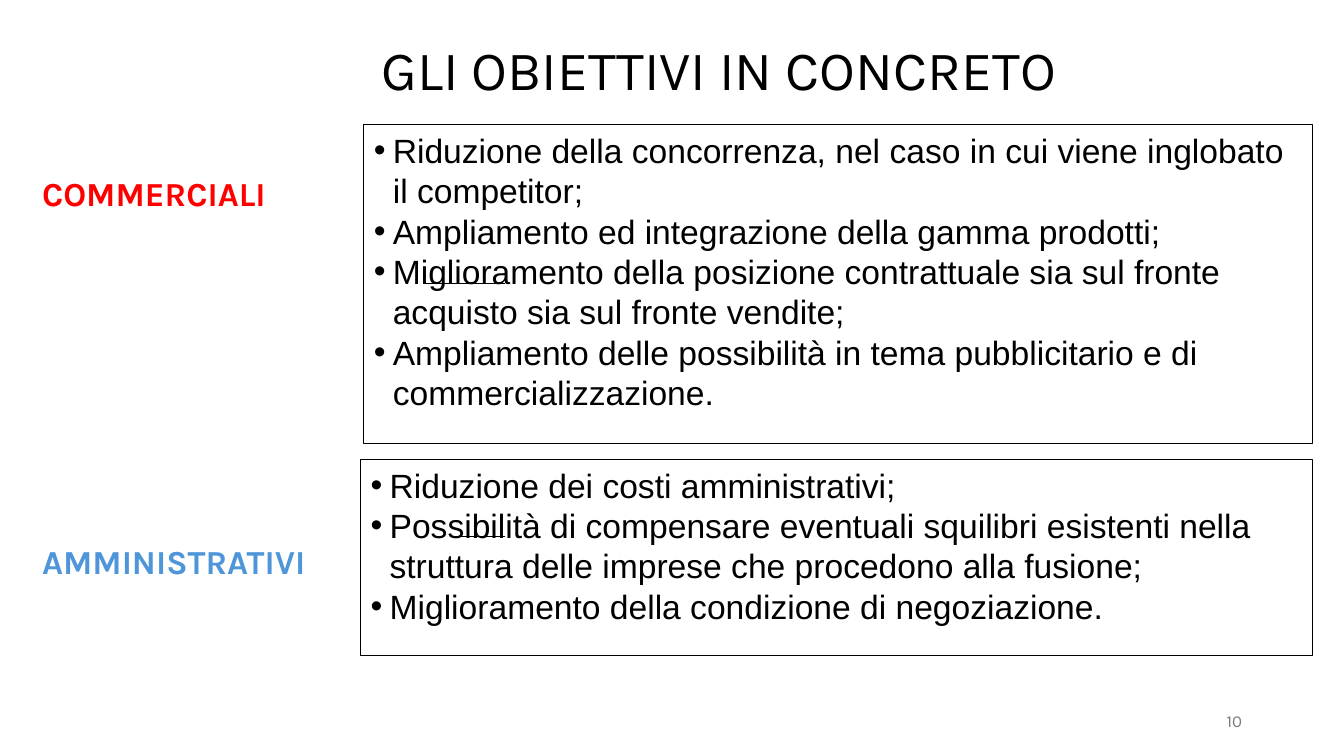
from pptx import Presentation, util as u
from pptx.dml.color import RGBColor
from pptx.enum import shapes, text
from pptx.oxml.ns import qn
from lxml import etree

BLACK = RGBColor(0x00, 0x00, 0x00)
RED = RGBColor(0xFF, 0x00, 0x00)
BLUE = RGBColor(0x4E, 0x95, 0xD9)
GREY = RGBColor(0x79, 0x79, 0x79)
LINE_WIDTH = u.Pt(0.75)
LABEL_LEFT = 0.81
RULE_END = 12.73

COMMERCIAL_GOALS = [
    "Riduzione della concorrenza, nel caso in cui viene inglobato il competitor;",
    "Ampliamento ed integrazione della gamma prodotti;",
    "Miglioramento della posizione contrattuale sia sul fronte acquisto sia sul fronte vendite;",
    "Ampliamento delle possibilità in tema pubblicitario e di commercializzazione.",
]
ADMINISTRATIVE_GOALS = [
    "Riduzione dei costi amministrativi;",
    "Possibilità di compensare eventuali squilibri esistenti nella struttura delle imprese "
    "che procedono alla fusione;",
    "Miglioramento della condizione di negoziazione.",
]


def cm_box(box):
    return [u.Cm(length) for length in box]


def add_bullet(paragraph, indent=0.48):
    properties = paragraph._p.get_or_add_pPr()
    properties.set("marL", str(u.Cm(indent)))
    properties.set("indent", str(-u.Cm(indent)))
    etree.SubElement(properties, qn("a:buFont")).set("typeface", "Arial")
    etree.SubElement(properties, qn("a:buChar")).set("char", "•")


def write_text(shape, lines, size=24, font="Karla", color=BLACK, bold=False,
               align=text.PP_ALIGN.LEFT, anchor=text.MSO_ANCHOR.TOP,
               spacing=1.0, bullets=False):
    frame = shape.text_frame
    frame.word_wrap = True
    frame.vertical_anchor = anchor
    for index, line in enumerate(lines):
        paragraph = frame.add_paragraph() if index else frame.paragraphs[0]
        paragraph.alignment = align
        paragraph.line_spacing = spacing
        if bullets:
            add_bullet(paragraph)
        run = paragraph.add_run()
        run.text = line
        run.font.name = font
        run.font.size = u.Pt(size)
        run.font.bold = bold
        run.font.color.rgb = color


def add_text(slide, box, line, **text_format):
    write_text(slide.shapes.add_textbox(*cm_box(box)), [line], **text_format)


def add_rule(slide, left, right, top):
    rule = slide.shapes.add_connector(
        shapes.MSO_CONNECTOR.STRAIGHT, u.Cm(left), u.Cm(top), u.Cm(right), u.Cm(top))
    rule.line.color.rgb = BLACK
    rule.line.width = LINE_WIDTH
    etree.SubElement(rule._element.spPr, qn("a:effectLst"))


def add_goals(slide, box, label, color, goals, label_drop, label_width, rule_shift, rule_drop):
    left, top, _, _ = box
    # Short rule behind the frame
    add_rule(slide, left + rule_shift, RULE_END, top + rule_drop)
    # Framed bullet list
    frame = slide.shapes.add_shape(shapes.MSO_SHAPE.RECTANGLE, *cm_box(box))
    frame.shadow.inherit = False
    frame.fill.background()
    frame.line.color.rgb = BLACK
    frame.line.width = LINE_WIDTH
    write_text(frame, goals, font="Arial", bullets=True)
    # Label on the left
    add_text(slide, (LABEL_LEFT, top + label_drop, label_width, 1.27), label,
             color=color, bold=True)


def main():
    presentation = Presentation()
    presentation.slide_width = u.Cm(33.87)
    presentation.slide_height = u.Cm(19.05)
    slide = presentation.slides.add_slide(presentation.slide_layouts[6])

    # Title
    add_text(slide, (7.82, 1.14, 20.6, 1.4), "GLI OBIETTIVI IN CONCRETO", size=39.6,
             align=text.PP_ALIGN.CENTER, anchor=text.MSO_ANCHOR.MIDDLE, spacing=0.9)

    # Groups of goals
    add_goals(slide, (9.17, 3.15, 23.9, 8.03), "COMMERCIALI", RED, COMMERCIAL_GOALS,
              label_drop=1.09, label_width=6.32, rule_shift=1.57, rule_drop=3.99)
    add_goals(slide, (9.09, 11.58, 23.98, 4.95), "AMMINISTRATIVI", BLUE, ADMINISTRATIVE_GOALS,
              label_drop=1.93, label_width=7.37, rule_shift=2.24, rule_drop=1.93)

    # Page number
    add_text(slide, (23.93, 17.65, 7.62, 1.02), "10", size=12, color=GREY,
             align=text.PP_ALIGN.RIGHT, anchor=text.MSO_ANCHOR.MIDDLE)

    presentation.save("out.pptx")


if __name__ == "__main__":
    main()
